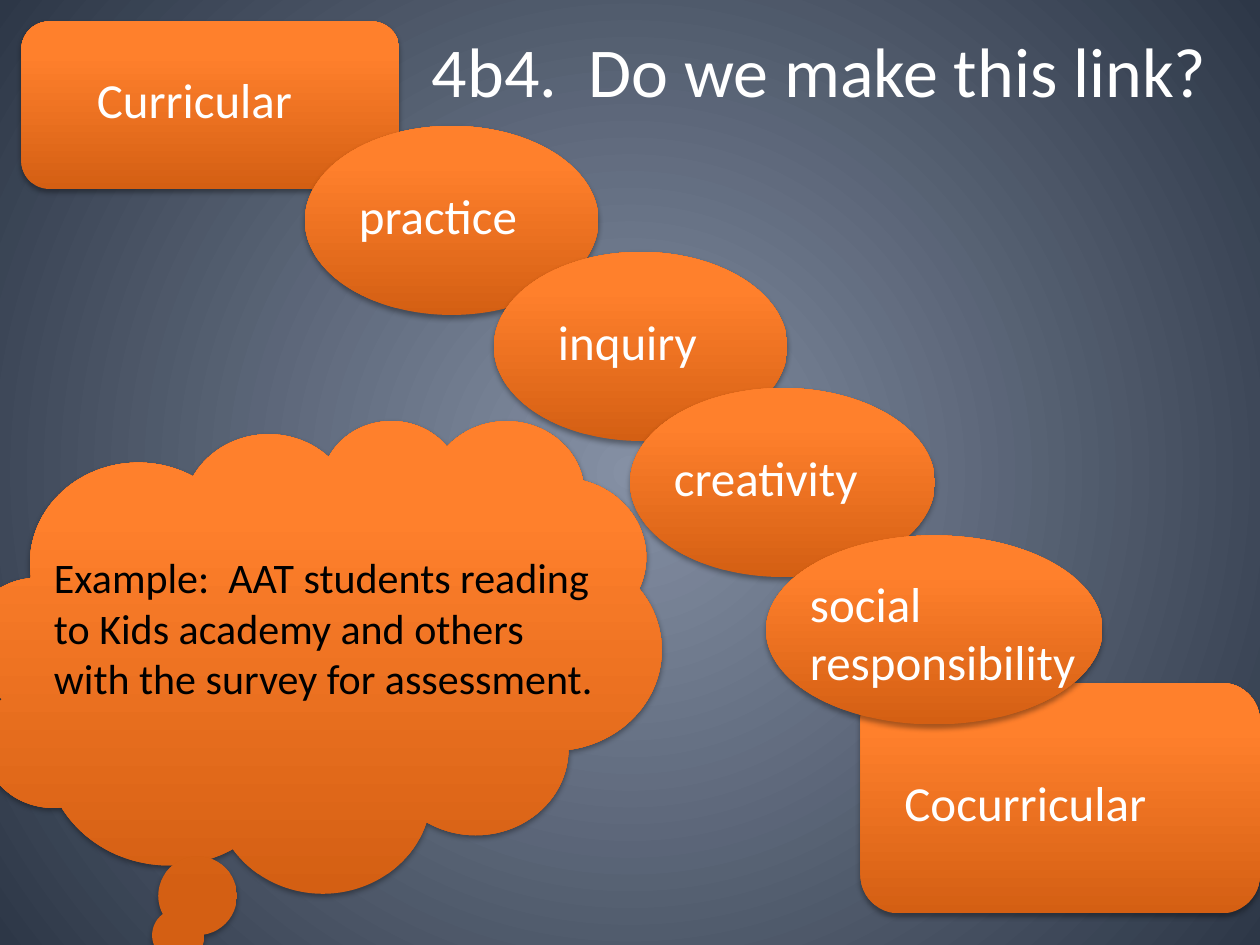
import pptx
import pptx.util
import pptx.dml.color
import pptx.enum.shapes
import pptx.enum.text
import pptx.oxml
import pptx.oxml.ns

Inches = pptx.util.Inches
RGB = pptx.dml.color.RGBColor
KIND = pptx.enum.shapes.MSO_SHAPE

WHITE = RGB(0xFF, 0xFF, 0xFF)
BLACK = RGB(0, 0, 0)
RUST = RGB(0xD4, 0x5F, 0x13)
ORANGE = RGB(0xFF, 0x80, 0x2C)
AMBER = RGB(0xFF, 0x81, 0x2E)
SLATE = RGB(0x85, 0x90, 0xA4)
NAVY = RGB(0x2D, 0x37, 0x47)

SHAPES = [
    (KIND.ROUNDED_RECTANGLE, 0.17, 0.17, 3, 1.33),
    (KIND.ROUNDED_RECTANGLE, 6.83, 5.42, 3.17, 1.83),
    (KIND.OVAL, 2.42, 1, 2.33, 1.5),
    (KIND.OVAL, 3.92, 2, 2.33, 1.5),
    (KIND.OVAL, 5, 3.08, 2.42, 1.5),
    (KIND.OVAL, 6.08, 4.25, 2.67, 1.5),
    (KIND.CLOUD_CALLOUT, -0.25, 3.33, 5.5, 3.75),
]

LABEL = {"size": pptx.util.Pt(28), "name": "Calibri"}
TITLE = {**LABEL, "size": pptx.util.Pt(40)}
NOTE = {**LABEL, "size": pptx.util.Pt(24)}

TEXTS = [
    ("practice", 2.75, 1.42, 1.5, 0.57, LABEL, WHITE),
    ("inquiry", 4.33, 2.42, 1.33, 0.57, LABEL, WHITE),
    ("creativity", 5.25, 3.5, 1.92, 0.57, LABEL, WHITE),
    ("social responsibility", 6.33, 4.5, 2.42, 1.04, LABEL, WHITE),
    ("Curricular", 0.67, 0.5, 2.08, 0.57, LABEL, WHITE),
    ("Cocurricular", 7.08, 6.08, 2.25, 0.57, LABEL, WHITE),
    ("4b4.  Do we make this link?", 3.33, 0.17, 6.42, 0.77, TITLE, WHITE),
    ("Example:  AAT students reading to Kids academy and others "
     "with the survey for assessment.", 0.33, 4.33, 4.58, 1.31, NOTE, BLACK),
]

RISE = '<a:lin ang="16200000" scaled="0"/>'
GLOW = ('<a:path path="circle"><a:fillToRect l="50000" t="50000" '
        'r="50000" b="50000"/></a:path>')
SHADE = ('<a:outerShdw {} blurRad="40000" dist="23000" dir="5400000" '
         'rotWithShape="0"><a:srgbClr val="000000"><a:alpha val="35000"/>'
         '</a:srgbClr></a:outerShdw>').format(pptx.oxml.ns.nsdecls("a"))


def blend(fill, root, stops, way):
    fill.gradient()
    old = root.find(".//" + pptx.oxml.ns.qn("a:gradFill"))
    marks = "".join(
        f'<a:gs pos="{at * 1000}"><a:srgbClr val="{tint}"/></a:gs>'
        for at, tint in stops)
    new = pptx.oxml.parse_xml(
        f'<a:gradFill {pptx.oxml.ns.nsdecls("a")} rotWithShape="1">'
        f'<a:gsLst>{marks}</a:gsLst>{way}</a:gradFill>')
    old.getparent().replace(old, new)


def draw(slide, kind, *box):
    shape = slide.shapes.add_shape(kind, *map(Inches, box))
    props = shape._element.spPr
    blend(shape.fill, props, [(0, RUST), (80, ORANGE), (100, AMBER)], RISE)
    shape.line.fill.background()
    shape.shadow.inherit = False
    cast = props.find(pptx.oxml.ns.qn("a:effectLst"))
    cast.append(pptx.oxml.parse_xml(SHADE))


def write(slide, text, x, y, w, h, form, tint):
    frame = slide.shapes.add_textbox(*map(Inches, (x, y, w, h))).text_frame
    frame.word_wrap = True
    frame.auto_size = pptx.enum.text.MSO_AUTO_SIZE.SHAPE_TO_FIT_TEXT
    run = frame.paragraphs[0].add_run()
    run.text = text
    for key, value in form.items():
        setattr(run.font, key, value)
    run.font.color.rgb = tint


def main():
    deck = pptx.Presentation()
    deck.slide_width, deck.slide_height = Inches(10), Inches(7.5)
    slide = deck.slides.add_slide(deck.slide_layouts[6])
    blend(slide.background.fill, slide._element,
          [(0, SLATE), (100, NAVY)], GLOW)
    for item in SHAPES:
        draw(slide, *item)
    for item in TEXTS:
        write(slide, *item)
    deck.save("out.pptx")


if __name__ == "__main__":
    main()
